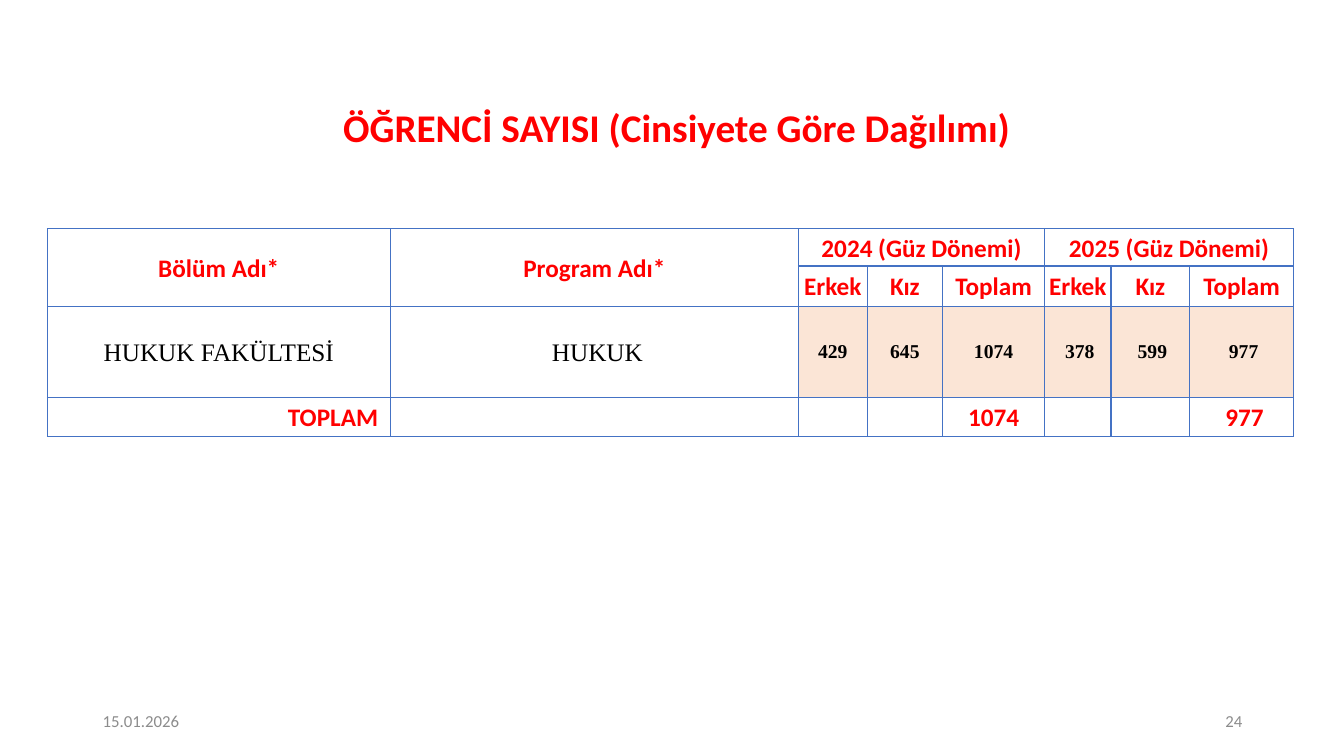
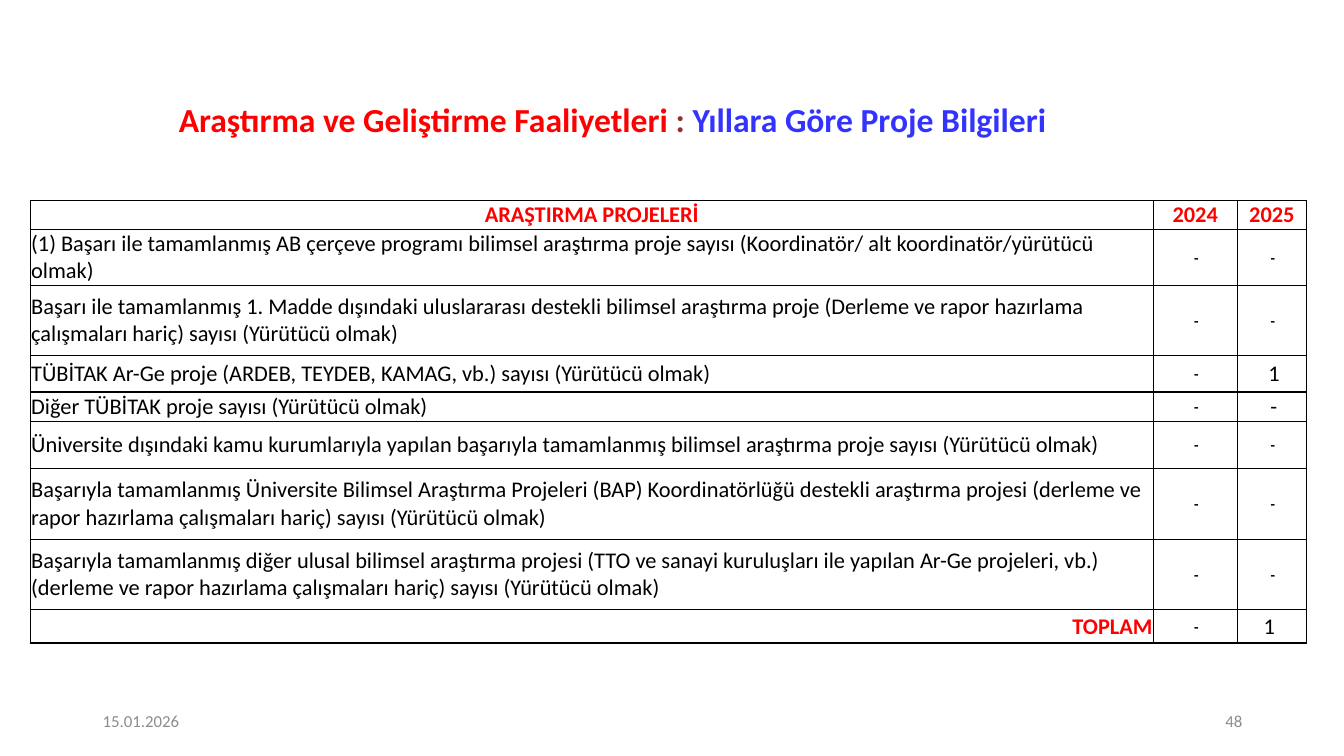
from dataclasses import dataclass, replace
from typing import Any

import pptx
import pptx.dml.color
import pptx.enum.text
import pptx.oxml
import pptx.oxml.ns
import pptx.util
from pptx.util import Inches

RED, BLUE, BROWN, BLACK, GRAY = "FF0000", "3333FF", "962E2E", "000000", "8C8C8C"
GRID_BLUE, PEACH = "4472C4", "FBE5D6"
DATE = "15.01.2026"
ALIGN = pptx.enum.text.PP_ALIGN
MIDDLE = pptx.enum.text.MSO_ANCHOR.MIDDLE


@dataclass(frozen=True)
class Style:
    size: float
    color: str = BLACK
    bold: bool = False
    font: str = "Calibri"
    align: Any = ALIGN.CENTER
    spacing: float | None = None
    fill: str | None = None
    left: float = 0.01
    right: float = 0.01


@dataclass(frozen=True)
class Cell:
    text: str
    style: Style
    rows: int = 1
    columns: int = 1


def rgb(color: str) -> pptx.dml.color.RGBColor:
    return pptx.dml.color.RGBColor.from_string(color)


# Text
def add_span(para: Any, text: str, *, size: float, color: str,
             bold: bool = False, font: str = "Calibri") -> None:
    span = para.add_run()
    span.text = text
    span.font.size = pptx.util.Pt(size)
    span.font.color.rgb = rgb(color)
    span.font.bold = bold
    span.font.name = font


def add_text(page: Any, place: tuple[float, float, float, float],
             spans: list[tuple[str, str]], *, size: float, bold: bool = False,
             align: Any = ALIGN.LEFT, spacing: float | None = None) -> None:
    box = page.shapes.add_textbox(*map(Inches, place))
    frame = box.text_frame
    frame.word_wrap = True
    frame.vertical_anchor = MIDDLE
    para = frame.paragraphs[0]
    para.alignment = align
    para.line_spacing = spacing
    for text, color in spans:
        add_span(para, text, size=size, color=color, bold=bold)


# Tables
def add_borders(cell: Any, color: str) -> None:
    properties = cell._tc.get_or_add_tcPr()
    for side in ("lnL", "lnR", "lnT", "lnB"):
        properties.append(pptx.oxml.parse_xml(
            f'<a:{side} {pptx.oxml.ns.nsdecls("a")} w="12700"><a:solidFill>'
            f'<a:srgbClr val="{color}"/></a:solidFill></a:{side}>'))


def fill_cell(target: Any, cell: Cell) -> None:
    style = cell.style
    target.margin_left, target.margin_right = Inches(style.left), Inches(style.right)
    if style.fill:
        target.fill.solid()
        target.fill.fore_color.rgb = rgb(style.fill)
    para = target.text_frame.paragraphs[0]
    para.alignment = style.align
    para.line_spacing = style.spacing
    add_span(para, cell.text, size=style.size, color=style.color,
             bold=style.bold, font=style.font)


def add_grid(page: Any, left: float, top: float, widths: list[float],
             heights: list[float], border: str, content: list[list[Cell | None]]) -> None:
    table = page.shapes.add_table(
        len(heights), len(widths), Inches(left), Inches(top),
        Inches(sum(widths)), Inches(sum(heights))).table
    table.first_row = table.horz_banding = False
    for column, width in zip(table.columns, widths):
        column.width = Inches(width)
    for row, height in zip(table.rows, heights):
        row.height = Inches(height)
    for target in table.iter_cells():
        target.margin_left = target.margin_right = 0
        target.margin_top = target.margin_bottom = 0
        target.vertical_anchor = MIDDLE
        add_borders(target, border)
        target.fill.background()
    for i, line in enumerate(content):
        for j, cell in enumerate(line):
            if cell is None:
                continue
            if cell.rows > 1 or cell.columns > 1:
                table.cell(i, j).merge(table.cell(i + cell.rows - 1, j + cell.columns - 1))
            fill_cell(table.cell(i, j), cell)


# Shared page frame
def add_page(deck: Any, number: int, place: tuple[float, float, float, float],
             title: list[tuple[str, str]], title_size: float) -> Any:
    page = deck.slides.add_slide(deck.slide_layouts[6])
    add_text(page, place, title, size=title_size, bold=True,
             align=ALIGN.CENTER, spacing=0.9)
    add_text(page, (0.92, 6.95, 3, 0.4), [(DATE, GRAY)], size=12)
    add_text(page, (9.42, 6.95, 3, 0.4), [(str(number), GRAY)], size=12, align=ALIGN.RIGHT)
    return page


def add_student_page(deck: Any) -> None:
    page = add_page(deck, 24, (0.68, 0.96, 12.06, 0.66),
                    [("ÖĞRENCİ SAYISI (Cinsiyete Göre Dağılımı)", RED)], 28)
    head = Style(18, RED, True, spacing=1.07, left=0, right=0)
    name = Style(18, font="Times New Roman", spacing=1.07)
    count = Style(14, bold=True, font="Times New Roman", fill=PEACH)
    shifted = replace(count, left=0.05)
    content = [
        [Cell("Bölüm Adı*", head, rows=2), Cell("Program Adı*", head, rows=2),
         Cell("2024 (Güz Dönemi)", head, columns=3), None, None,
         Cell("2025 (Güz Dönemi)", head, columns=3), None, None],
        [None, None] + [Cell(text, head) for text in ("Erkek", "Kız", "Toplam") * 2],
        [Cell("HUKUK FAKÜLTESİ", name), Cell("HUKUK", replace(name, left=0.07))]
        + [Cell(text, count) for text in ("429", "645", "1074")]
        + [Cell(text, shifted) for text in ("378", "599", "977")],
        [Cell("TOPLAM", replace(head, align=ALIGN.RIGHT, right=0.12)), None, None, None,
         Cell("1074", head), None, None, Cell("977", replace(head, left=0.06))],
    ]
    add_grid(page, 0.47, 2.27, [3.4, 4.05, 0.68, 0.75, 1.01, 0.66, 0.78, 1.03],
             [0.37, 0.4, 0.9, 0.39], GRID_BLUE, content)


def add_project_page(deck: Any) -> None:
    page = add_page(deck, 48, (0.4, 0.89, 11.35, 0.64),
                    [("Araştırma ve Geliştirme Faaliyetleri ", RED), (": ", BROWN),
                     ("Yıllara Göre Proje Bilgileri", BLUE)], 24)
    head = Style(16, RED, True)
    label = Style(16, align=ALIGN.LEFT)
    dash = Style(10.5, bold=True, spacing=1.07, left=0.03)
    value = Style(16, left=0.05)
    projects = [
        ("(1) Başarı ile tamamlanmış AB çerçeve programı bilimsel araştırma proje sayısı "
         "(Koordinatör/ alt koordinatör/yürütücü olmak)", "-", dash),
        ("Başarı ile tamamlanmış 1. Madde dışındaki uluslararası destekli bilimsel araştırma "
         "proje (Derleme ve rapor hazırlama çalışmaları hariç) sayısı (Yürütücü olmak)",
         "-", dash),
        ("TÜBİTAK Ar-Ge proje (ARDEB, TEYDEB, KAMAG, vb.) sayısı (Yürütücü olmak)",
         "1", value),
        ("Diğer TÜBİTAK proje sayısı (Yürütücü olmak)", "-", value),
        ("Üniversite dışındaki kamu kurumlarıyla yapılan başarıyla tamamlanmış bilimsel "
         "araştırma proje sayısı (Yürütücü olmak)", "-", dash),
        ("Başarıyla tamamlanmış Üniversite Bilimsel Araştırma Projeleri (BAP) Koordinatörlüğü "
         "destekli araştırma projesi (derleme ve rapor hazırlama çalışmaları hariç) sayısı "
         "(Yürütücü olmak)", "-", dash),
        ("Başarıyla tamamlanmış diğer ulusal bilimsel araştırma projesi (TTO ve sanayi "
         "kuruluşları ile yapılan Ar-Ge projeleri, vb.) (derleme ve rapor hazırlama "
         "çalışmaları hariç) sayısı (Yürütücü olmak)", "-", dash),
    ]
    content = [[Cell(text, head) for text in ("ARAŞTIRMA PROJELERİ", "2024", "2025")]]
    content += [[Cell(text, label), Cell("-", dash), Cell(latest, style)]
                for text, latest, style in projects]
    content.append([Cell("TOPLAM", replace(head, align=ALIGN.RIGHT)), Cell("-", dash),
                    Cell("1", replace(value, left=0.01, right=0.06))])
    add_grid(page, 0.3, 1.99, [11.14, 0.83, 0.69],
             [0.29, 0.55, 0.7, 0.36, 0.29, 0.47, 0.7, 0.7, 0.33], BLACK, content)


def main() -> None:
    deck = pptx.Presentation()
    deck.slide_width, deck.slide_height = Inches(13.33), Inches(7.5)
    add_student_page(deck)
    add_project_page(deck)
    deck.save("out.pptx")


if __name__ == "__main__":
    main()
